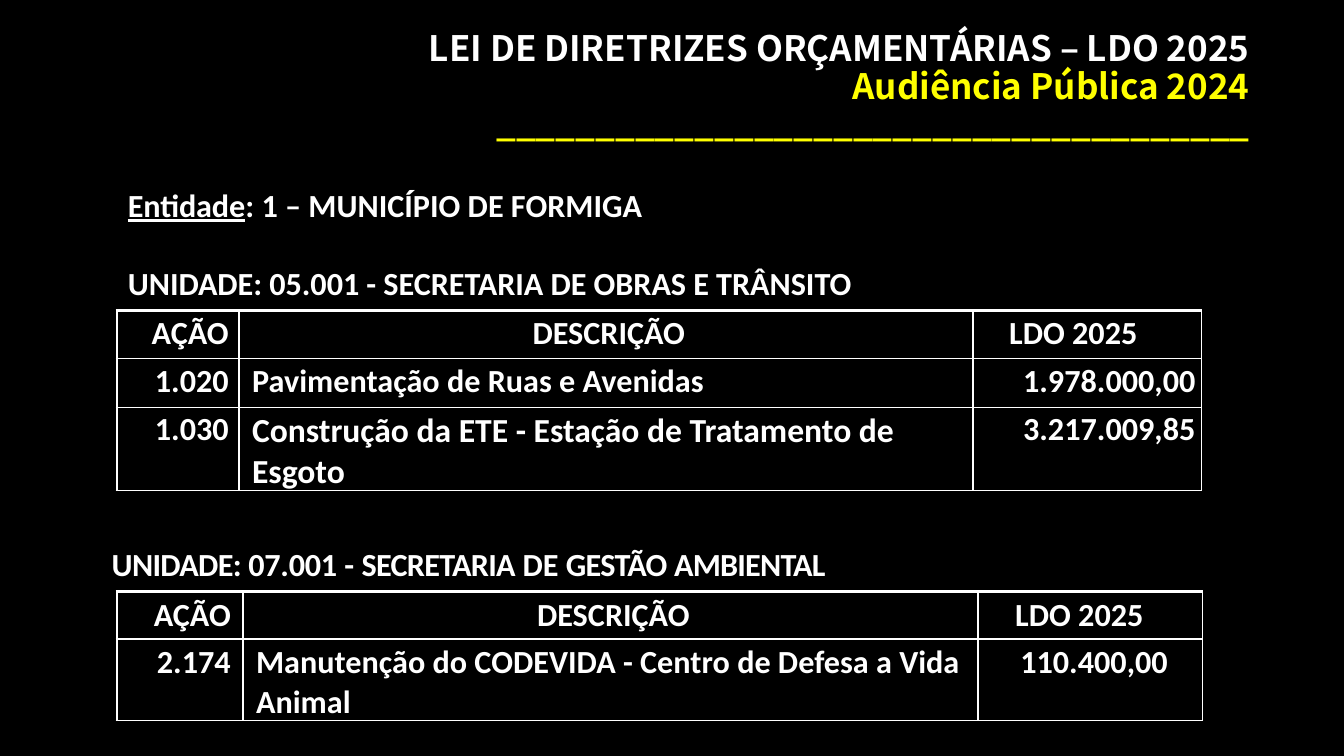
from lxml import etree
from pptx import Presentation
from pptx.dml.color import RGBColor
from pptx.enum.text import MSO_ANCHOR, PP_ALIGN
from pptx.oxml.ns import qn
from pptx.util import Inches, Pt

LEFT, CENTER, RIGHT = PP_ALIGN.LEFT, PP_ALIGN.CENTER, PP_ALIGN.RIGHT
TOP = MSO_ANCHOR.TOP
BLACK = RGBColor(0, 0, 0)
WHITE = RGBColor(0xFF, 0xFF, 0xFF)
YELLOW = RGBColor(0xFF, 0xFF, 0)
TITLE_FORMAT = {"name": "Noto Sans CJK JP", "size": Pt(25), "bold": True}
BODY_FORMAT = {"name": "Calibri", "size": Pt(23), "bold": True}
THIN, THICK = Pt(1), Pt(2.25)

TITLE_LINES = [
    ("LEI DE DIRETRIZES ORÇAMENTÁRIAS – LDO 2025", WHITE),
    ("Audiência Pública 2024", YELLOW),
    ("_" * 38, YELLOW),
]
HEADER = ["AÇÃO", "DESCRIÇÃO", "LDO 2025"]
WORKS_ROWS = [
    HEADER,
    ["1.020", "Pavimentação de Ruas e Avenidas", "1.978.000,00"],
    ["1.030", "Construção da ETE - Estação de Tratamento de Esgoto", "3.217.009,85"],
]
ENVIRONMENT_ROWS = [
    HEADER,
    ["2.174", "Manutenção do CODEVIDA - Centro de Defesa a Vida Animal", "110.400,00"],
]
# Spacing in hundredths of a point
ENVIRONMENT_HEADING = [
    ("UNIDADE: ", -50), ("07.001 ", -20), ("- ", 0), ("SECRETARIA ", -50),
    ("DE ", 0), ("GESTÃO ", -50), ("AMBIENTAL", -60),
]


def add_span(para, text, base, spacing=0, color=WHITE, **changes):
    span = para.add_run()
    span.text = text
    for name, value in {**base, **changes}.items():
        setattr(span.font, name, value)
    span.font.color.rgb = color
    if spacing:
        span._r.get_or_add_rPr().set("spc", str(spacing))


def add_box(page, left, top, width, height):
    box = page.shapes.add_textbox(Inches(left), Inches(top), Inches(width), Inches(height))
    box.text_frame.word_wrap = True
    box.text_frame.vertical_anchor = TOP
    return box.text_frame


def add_title(page):
    frame = add_box(page, 0.99, 0.26, 11.5, 1.45)
    for index, (text, color) in enumerate(TITLE_LINES):
        para = frame.add_paragraph() if index else frame.paragraphs[0]
        para.alignment = RIGHT
        para.line_spacing = 0.9
        add_span(para, text, TITLE_FORMAT, color=color)


def add_entity(page):
    frame = add_box(page, 1.17, 1.79, 9.85, 1.26)
    entity = frame.paragraphs[0]
    add_span(entity, "Entidade", BODY_FORMAT, -10, underline=True)
    add_span(entity, ": 1 – MUNICÍPIO DE FORMIGA", BODY_FORMAT)
    unit = frame.add_paragraph()
    unit.space_before = Pt(28)
    add_span(unit, "UNIDADE: 05.001 - SECRETARIA DE OBRAS E TRÂNSITO", BODY_FORMAT, -5)


def add_environment_heading(page):
    para = add_box(page, 1.01, 5.35, 10.02, 0.49).paragraphs[0]
    for text, spacing in ENVIRONMENT_HEADING:
        add_span(para, text, BODY_FORMAT, spacing)


def add_borders(cell, widths):
    properties = cell._tc.get_or_add_tcPr()
    for side, width in zip("LRTB", widths):
        line = etree.SubElement(properties, qn(f"a:ln{side}"), w=str(int(width)))
        fill = etree.SubElement(line, qn("a:solidFill"))
        etree.SubElement(fill, qn("a:srgbClr"), val=str(WHITE))


def add_budget_table(page, top, rows, columns, heights, margin_top, amount_layout, code_right,
                     amount_header_left, sizes):
    """Draw an action table; amount_layout is (alignment, left, right) of its amounts."""
    shape = page.shapes.add_table(len(rows), len(columns), Inches(1.16), Inches(top),
                                  Inches(sum(columns)), Inches(sum(heights)))
    table = shape.table
    table.first_row = table.horz_banding = False
    for column, width in zip(table.columns, columns):
        column.width = Inches(width)
    for row, height in zip(table.rows, heights):
        row.height = Inches(height)
    code_layout = (RIGHT, 0, code_right)
    header_layouts = [code_layout, (CENTER, 0.06, 0), (LEFT, amount_header_left, 0)]
    body_layouts = [code_layout, (LEFT, 0.13, 0), amount_layout]
    for r, texts in enumerate(rows):
        for c, text in enumerate(texts):
            alignment, left, right = (body_layouts if r else header_layouts)[c]
            cell = table.cell(r, c)
            margins = {"margin_left": left, "margin_right": right,
                       "margin_top": margin_top, "margin_bottom": 0}
            for name, value in margins.items():
                setattr(cell, name, Inches(value))
            add_borders(cell, [THIN if c else THICK, THIN, THIN if r else THICK, THIN])
            cell.fill.background()
            para = cell.text_frame.paragraphs[0]
            para.alignment = alignment
            add_span(para, text, BODY_FORMAT, size=sizes.get((r, c), Pt(23)))


def main():
    deck = Presentation()
    deck.slide_width, deck.slide_height = Inches(13.33), Inches(7.5)
    page = deck.slides.add_slide(deck.slide_layouts[6])
    page.background.fill.solid()
    page.background.fill.fore_color.rgb = BLACK
    add_title(page)
    add_entity(page)
    add_budget_table(page, 3.08, WORKS_ROWS, [1.21, 7.28, 2.27], [0.48, 0.48, 0.83], 0.03,
                     (RIGHT, 0, 0.06), 0.1, 0.36, {(2, 1): Pt(24)})
    add_environment_heading(page)
    add_budget_table(page, 5.87, ENVIRONMENT_ROWS, [1.25, 7.29, 2.23], [0.47, 0.81], 0.04,
                     (LEFT, 0.42, 0), 0.12, 0.37, {})
    deck.save("out.pptx")


if __name__ == "__main__":
    main()
